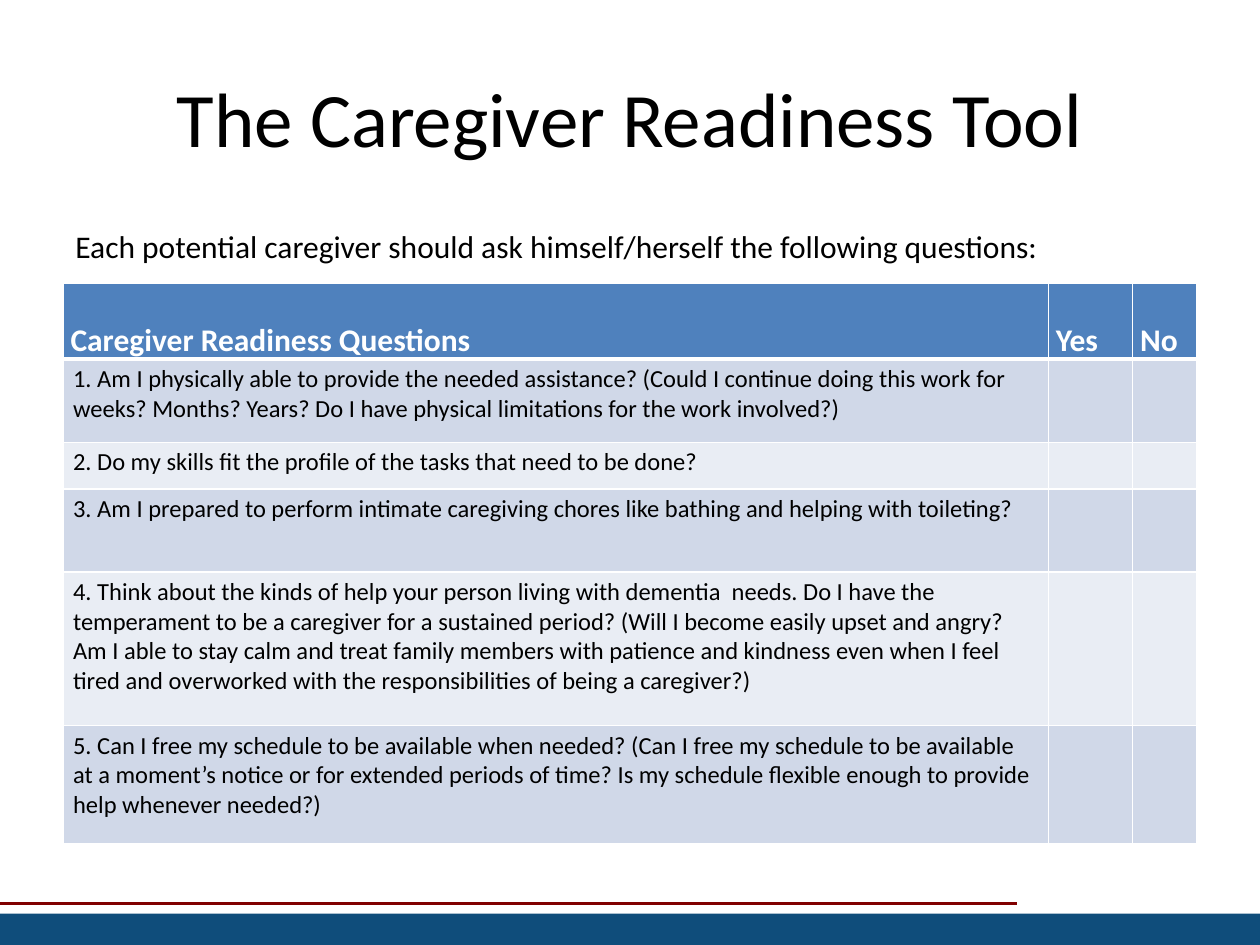
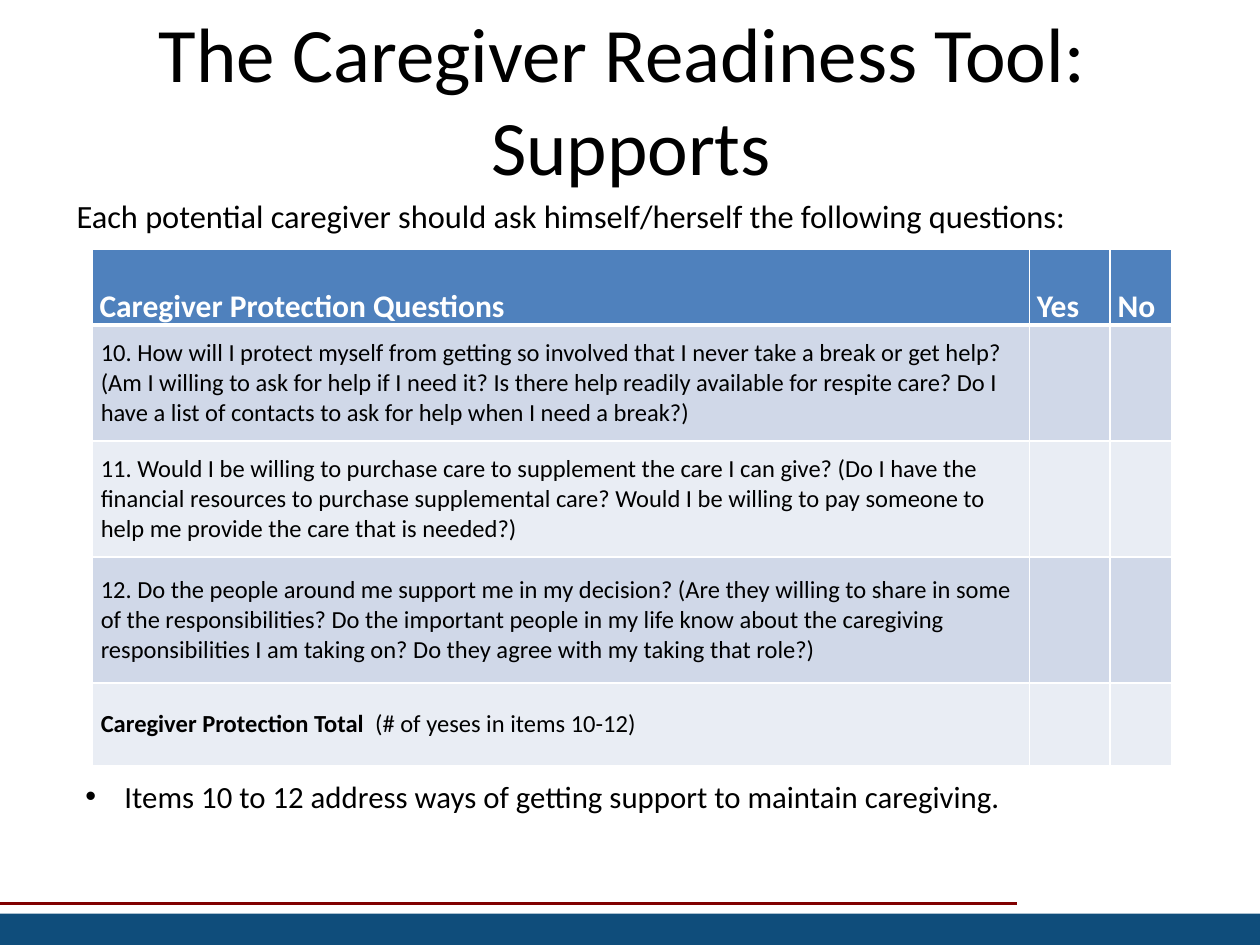
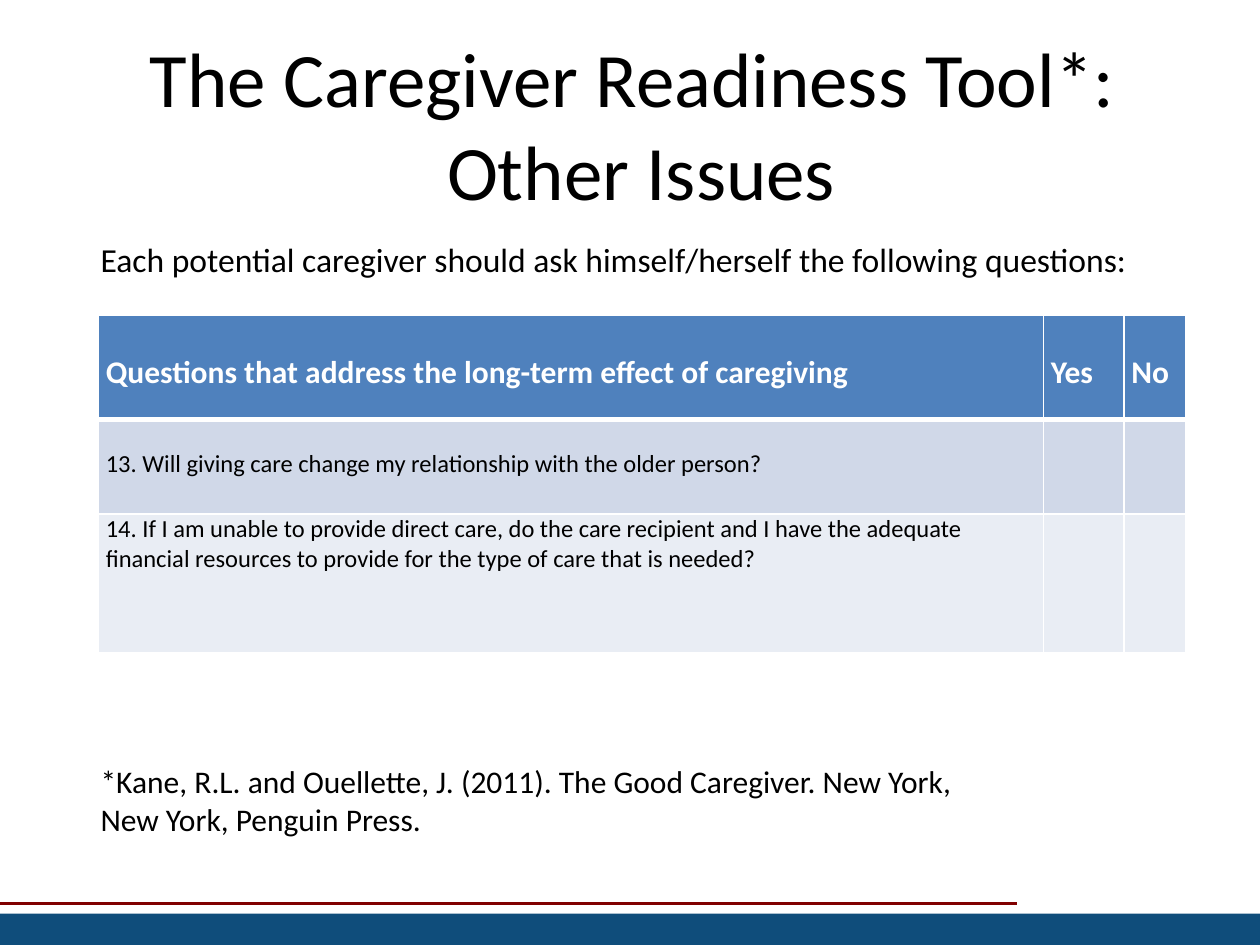
from lxml import etree
from pptx import Presentation
from pptx.dml.color import RGBColor
from pptx.enum.shapes import MSO_CONNECTOR, MSO_SHAPE
from pptx.enum.text import MSO_ANCHOR, PP_ALIGN
from pptx.oxml.ns import qn
from pptx.util import Inches, Pt

TOP, MIDDLE = MSO_ANCHOR.TOP, MSO_ANCHOR.MIDDLE
LEFT, CENTER = PP_ALIGN.LEFT, PP_ALIGN.CENTER
STRAIGHT, RECTANGLE = MSO_CONNECTOR.STRAIGHT, MSO_SHAPE.RECTANGLE

FONT = "Calibri"
COLORS = {
    "text": "000000",
    "white": "FFFFFF",
    "header": "4F81BD",
    "odd": "D0D8E8",
    "even": "E9EDF4",
    "rule": "800000",
    "band": "0F4D7B",
}
PROMPT = "Each potential caregiver should ask himself/herself the following questions:"
HEADER_FORMAT = {"margin_left": Inches(0.06), "margin_right": Inches(0.06),
                 "margin_top": 0, "margin_bottom": 0}
ANSWER_FORMAT = {"margin_top": 0, "margin_bottom": 0}

SLIDES = [
    {
        "title": ("The Caregiver Readiness Tool", (0.5, 0.3, 9, 1.25), 44, 0.05),
        "notes": [(PROMPT, (0.5, 1.75, 9, 0.5), 18, False)],
        "table": (0.5, 2.25),
        "columns": [7.82, 0.67, 0.51],
        "heading": ("Caregiver Readiness Questions", 0.57),
        "insets": (0.08, 0.04),
        "anchor": TOP,
        "questions": [
            (0.66, 1, "", "1. Am I physically able to provide the needed assistance? (Could I continue doing this work for weeks? Months? Years? Do I have physical limitations for the work involved?)"),
            (0.37, 1, "", "2. Do my skills fit the profile of the tasks that need to be done?"),
            (0.66, 1, "", "3. Am I prepared to perform intimate caregiving chores like bathing and helping with toileting?"),
            (1.22, 1, "", "4. Think about the kinds of help your person living with dementia  needs. Do I have the temperament to be a caregiver for a sustained period? (Will I become easily upset and angry? Am I able to stay calm and treat family members with patience and kindness even when I feel tired and overworked with the responsibilities of being a caregiver?)"),
            (0.94, 1, "", "5. Can I free my schedule to be available when needed? (Can I free my schedule to be available at a moment’s notice or for extended periods of time? Is my schedule flexible enough to provide help whenever needed?)"),
        ],
    },
    {
        "title": ("The Caregiver Readiness Tool: \vSupports", (0.01, 0.44, 10, 1.25), 44, 0.62),
        "notes": [
            (PROMPT, (0.51, 1.51, 9, 0.38), 18.5, False),
            ("Items 10 to 12 address ways of getting support to maintain caregiving.",
             (0.58, 6.12, 9, 0.38), 17.6, True),
        ],
        "table": (0.73, 1.98),
        "columns": [7.44, 0.64, 0.49],
        "heading": ("Caregiver Protection Questions", 0.57),
        "insets": (0.07, 0.04),
        "anchor": MIDDLE,
        "questions": [
            (0.92, 1, "", "10. How will I protect myself from getting so involved that I never take a break or get help? (Am I willing to ask for help if I need it? Is there help readily available for respite care? Do I have a list of contacts to ask for help when I need a break?)"),
            (0.92, 1, "", "11. Would I be willing to purchase care to supplement the care I can give? (Do I have the financial resources to purchase supplemental care? Would I be willing to pay someone to help me provide the care that is needed?)"),
            (1, 1, "", "12. Do the people around me support me in my decision? (Are they willing to share in some of the responsibilities? Do the important people in my life know about the caregiving responsibilities I am taking on? Do they agree with my taking that role?)"),
            (0.66, 1, "Caregiver Protection Total", "  (# of yeses in items 10-12)"),
        ],
    },
    {
        "title": ("The Caregiver Readiness Tool*: \vOther Issues", (0.59, 0.75, 9, 1.1), 44, 0.69),
        "notes": [
            (PROMPT, (0.7, 1.85, 9, 0.38), 19.2, False),
            ("*Kane, R.L. and Ouellette, J. (2011). The Good Caregiver. New York, \vNew York, Penguin Press.",
             (0.7, 6, 9, 0.67), 18, False),
        ],
        "table": (0.78, 2.5),
        "columns": [7.5, 0.64, 0.49],
        "heading": ("Questions that address the long-term effect of caregiving", 0.83),
        "insets": (0.06, 0),
        "anchor": TOP,
        "questions": [
            (0.75, 2, "", "13. Will giving care change my relationship with the older person?"),
            (1.1, 1, "", "14. If I am unable to provide direct care, do the care recipient and I have the adequate financial resources to provide for the type of care that is needed?"),
        ],
    },
]


def add_text(slide, text, place, size, align=LEFT, anchor=TOP, bottom=0.05, bullet=False):
    frame = slide.shapes.add_textbox(*map(Inches, place)).text_frame
    frame.word_wrap = True
    frame.vertical_anchor = anchor
    frame.margin_bottom = Inches(bottom)
    paragraph = frame.paragraphs[0]
    paragraph.text = text
    paragraph.alignment = align
    if bullet:
        properties = paragraph._p.get_or_add_pPr()
        properties.set("marL", str(Inches(0.31)))
        properties.set("indent", str(-Inches(0.31)))
        etree.SubElement(properties, qn("a:buFont"), typeface="Arial")
        etree.SubElement(properties, qn("a:buChar"), char="•")
    for run in paragraph.runs:
        run.font.name = FONT
        run.font.size = Pt(size)
        run.font.color.rgb = RGBColor.from_string(COLORS["text"])


def fill_cell(cell, fill, runs, size, color, spacing, formats, bottom_border=1):
    for name, value in formats.items():
        setattr(cell, name, value)
    properties = cell._tc.get_or_add_tcPr()
    for side, width in (("L", 1), ("R", 1), ("T", 1), ("B", bottom_border)):
        border = etree.SubElement(properties, qn(f"a:ln{side}"), w=str(Pt(width)))
        solid = etree.SubElement(border, qn("a:solidFill"))
        etree.SubElement(solid, qn("a:srgbClr"), val=COLORS["white"])
    cell.fill.solid()
    cell.fill.fore_color.rgb = RGBColor.from_string(COLORS[fill])
    paragraph = cell.text_frame.paragraphs[0]
    paragraph.line_spacing = spacing
    if spacing > 1:
        paragraph.space_after = Pt(1)
    for text, bold in runs:
        run = paragraph.add_run()
        run.text = text
        run.font.name = FONT
        run.font.size = Pt(size)
        run.font.bold = bold
        run.font.color.rgb = RGBColor.from_string(COLORS[color])


prs = Presentation()
prs.slide_width, prs.slide_height = Inches(10), Inches(7.5)

for content in SLIDES:
    slide = prs.slides.add_slide(prs.slide_layouts[6])

    rule = slide.shapes.add_connector(STRAIGHT, 0, Inches(7.17), Inches(8.07), Inches(7.17))
    rule.line.color.rgb = RGBColor.from_string(COLORS["rule"])
    rule.line.width = Pt(1.5)
    etree.SubElement(rule._element.spPr, qn("a:effectLst"))
    band = slide.shapes.add_shape(RECTANGLE, 0, Inches(7.25), Inches(10), Inches(0.25))
    band.shadow.inherit = False
    band.fill.solid()
    band.fill.fore_color.rgb = RGBColor.from_string(COLORS["band"])
    band.line.fill.background()

    title, place, size, bottom = content["title"]
    add_text(slide, title, place, size, CENTER, MIDDLE, bottom)
    for note, place, size, bullet in content["notes"]:
        add_text(slide, note, place, size, bullet=bullet)

    heading, heading_height = content["heading"]
    questions = content["questions"]
    columns = content["columns"]
    heights = [heading_height] + [question[0] for question in questions]
    left, top = content["table"]
    checklist = slide.shapes.add_table(
        len(heights), len(columns), Inches(left), Inches(top),
        Inches(sum(columns)), Inches(sum(heights))).table
    for column, width in zip(checklist.columns, columns):
        column.width = Inches(width)
    for row, height in zip(checklist.rows, heights):
        row.height = Inches(height)

    for index, label in enumerate((heading, "Yes", "No")):
        fill_cell(checklist.cell(0, index), "header", [(label, True)], 18, "white", 2,
                  HEADER_FORMAT, bottom_border=3)

    side, edge = map(Inches, content["insets"])
    question_format = {"margin_left": side, "margin_right": side, "margin_top": edge,
                       "margin_bottom": edge, "vertical_anchor": content["anchor"]}
    for number, (height, spacing, lead, question) in enumerate(questions, 1):
        fill = "odd" if number % 2 else "even"
        runs = [(text, bold) for text, bold in ((lead, True), (question, False)) if text]
        fill_cell(checklist.cell(number, 0), fill, runs, 14, "text", spacing, question_format)
        for answer in (1, 2):
            fill_cell(checklist.cell(number, answer), fill, [], 14, "text", 1, ANSWER_FORMAT)

prs.save("out.pptx")
